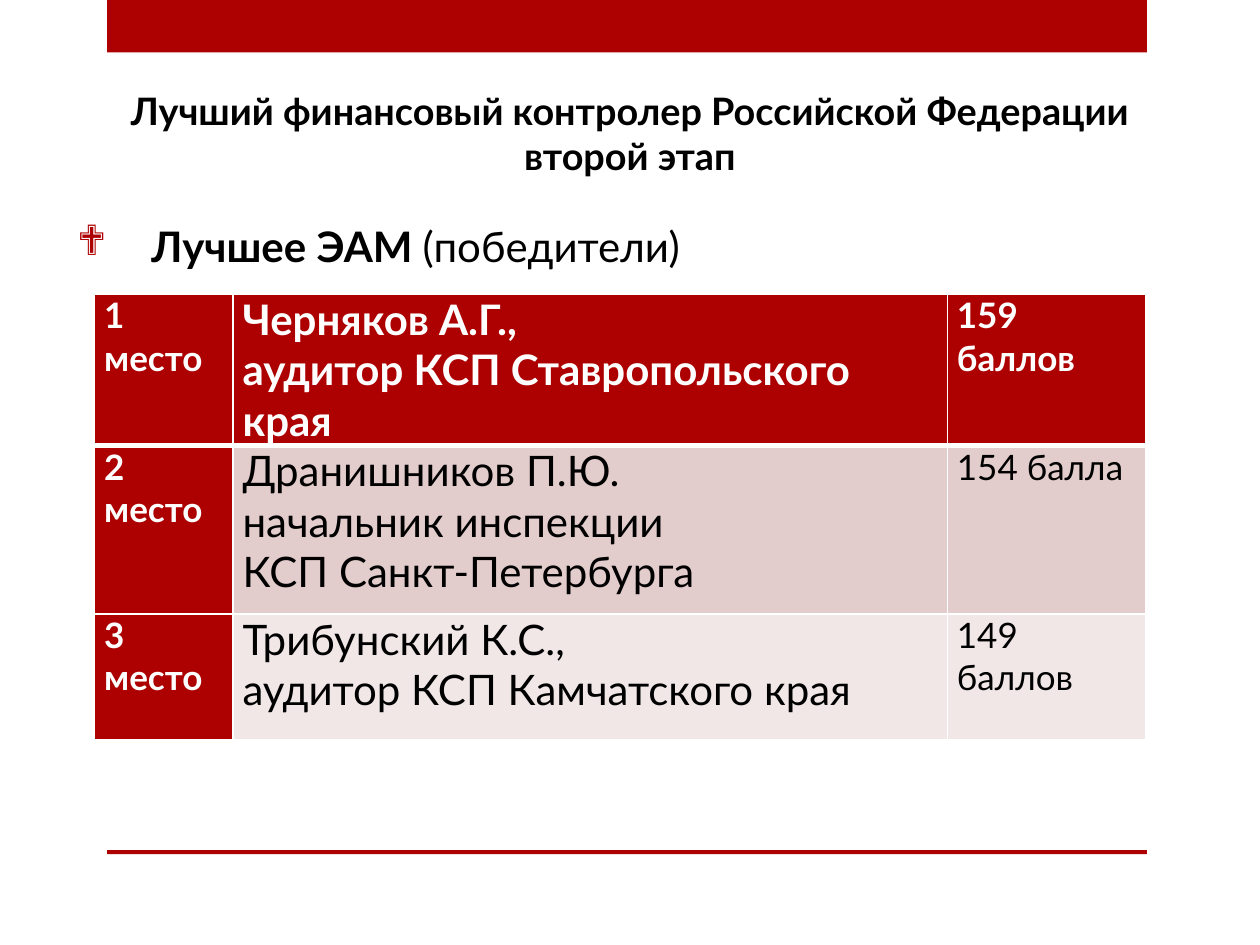
from lxml import etree
from pptx import Presentation
from pptx import util as u
from pptx.dml.color import RGBColor
from pptx.enum import shapes, text
from pptx.oxml import ns

RED = RGBColor(0xAD, 0x01, 0x01)
BLACK = RGBColor(0, 0, 0)
WHITE = RGBColor(255, 255, 255)
ROSE = RGBColor(0xE3, 0xCC, 0xCC)
PALE_ROSE = RGBColor(0xF1, 0xE7, 0xE7)

WINNERS = [
    ("1 место", "Черняков А.Г.,\vаудитор КСП Ставропольского края", "159 баллов"),
    ("2 место", "Дранишников П.Ю.\vначальник инспекции \vКСП Санкт-Петербурга", "154 балла"),
    ("3 место", "Трибунский К.С., \vаудитор КСП Камчатского края", "149 баллов"),
]
COLUMN_WIDTHS = (2.79, 14.4, 4.0)
ROW_HEIGHTS = (2.6, 3.4, 2.54)
ROW_FILLS = (RED, ROSE, PALE_ROSE)


class SlideBuilder:
    font_name = "Lato"

    def __init__(self, presentation):
        self.slide = presentation.slides.add_slide(presentation.slide_layouts[1])

    def place(self, shape, left, top, width, height):
        shape.left, shape.top = u.Cm(left), u.Cm(top)
        shape.width, shape.height = u.Cm(width), u.Cm(height)

    def style(self, paragraph, size, color, bold):
        for run in paragraph.runs:
            run.font.name = self.font_name
            run.font.size = u.Pt(size)
            run.font.color.rgb = color
            run.font.bold = bold

    def bar(self, left, top, width, height):
        shape = self.slide.shapes.add_shape(
            shapes.MSO_SHAPE.RECTANGLE, u.Cm(left), u.Cm(top), u.Cm(width), u.Cm(height))
        shape.shadow.inherit = False
        shape.fill.solid()
        shape.fill.fore_color.rgb = RED
        shape.line.fill.background()

    def title(self, wording, *box):
        shape = self.slide.shapes.title
        self.place(shape, *box)
        frame = shape.text_frame
        frame.text = wording
        frame.auto_size = text.MSO_AUTO_SIZE.NONE
        frame.vertical_anchor = text.MSO_ANCHOR.BOTTOM
        paragraph = frame.paragraphs[0]
        paragraph.alignment = text.PP_ALIGN.CENTER
        self.style(paragraph, 21.6, BLACK, True)

    def bullet(self, strong, plain, *box):
        shape = self.slide.placeholders[1]
        self.place(shape, *box)
        frame = shape.text_frame
        frame.text = strong
        frame.auto_size = text.MSO_AUTO_SIZE.NONE
        paragraph = frame.paragraphs[0]
        paragraph.space_before = u.Pt(12)
        paragraph.add_run().text = plain
        self.style(paragraph, 24, BLACK, True)
        paragraph.runs[1].font.bold = False
        properties = paragraph._p.get_or_add_pPr()
        indent = u.Cm(1.5)
        properties.set("marL", str(indent))
        properties.set("indent", str(-indent))
        color = etree.SubElement(properties, ns.qn("a:buClr"))
        etree.SubElement(color, ns.qn("a:srgbClr"), val=str(RED))
        etree.SubElement(properties, ns.qn("a:buFont"), typeface="Wingdings")
        etree.SubElement(properties, ns.qn("a:buChar"), char="❖")

    def borders(self, cell, bottom_width):
        properties = cell._tc.get_or_add_tcPr()
        widths = {"lnL": 1, "lnR": 1, "lnT": 1, "lnB": bottom_width}
        for position, (tag, width) in enumerate(widths.items()):
            line = etree.Element(ns.qn(f"a:{tag}"), w=str(u.Pt(width)))
            fill = etree.SubElement(line, ns.qn("a:solidFill"))
            etree.SubElement(fill, ns.qn("a:srgbClr"), val=str(WHITE))
            properties.insert(position, line)

    def table(self, rows, left, top):
        table = self.slide.shapes.add_table(
            len(rows), len(COLUMN_WIDTHS), u.Cm(left), u.Cm(top),
            u.Cm(sum(COLUMN_WIDTHS)), u.Cm(sum(ROW_HEIGHTS))).table
        for column, width in zip(table.columns, COLUMN_WIDTHS):
            column.width = u.Cm(width)
        for row, height in zip(table.rows, ROW_HEIGHTS):
            row.height = u.Cm(height)
        for row_index, row in enumerate(rows):
            for column_index, wording in enumerate(row):
                self.cell(table.cell(row_index, column_index), wording, row_index, column_index)

    def cell(self, cell, wording, row_index, column_index):
        heading = row_index == 0 or column_index == 0
        is_name = column_index == 1
        cell.margin_left = cell.margin_right = u.Cm(0.19)
        cell.margin_top = cell.margin_bottom = 0
        cell.fill.solid()
        cell.fill.fore_color.rgb = RED if heading else ROW_FILLS[row_index]
        self.borders(cell, 3 if row_index == 0 else 1)
        cell.text_frame.text = wording
        paragraph = cell.text_frame.paragraphs[0]
        paragraph.alignment = text.PP_ALIGN.LEFT if is_name else text.PP_ALIGN.JUSTIFY
        self.style(paragraph, 24 if is_name else 20, WHITE if heading else BLACK, heading)


def main():
    presentation = Presentation()
    presentation.slide_width, presentation.slide_height = u.Cm(25.4), u.Cm(19.05)
    builder = SlideBuilder(presentation)
    builder.bar(2.16, 0, 20.96, 1.06)
    builder.bar(2.16, 17.14, 20.96, 0.08)
    builder.title("Лучший финансовый контролер Российской Федерации\vвторой этап",
                  1.27, 1.52, 22.86, 2.2)
    builder.bullet("Лучшее ЭАМ ", "(победители)", 1.3, 4.32, 23.2, 12.6)
    builder.table(WINNERS, 1.91, 5.93)
    presentation.save("out.pptx")


if __name__ == "__main__":
    main()
